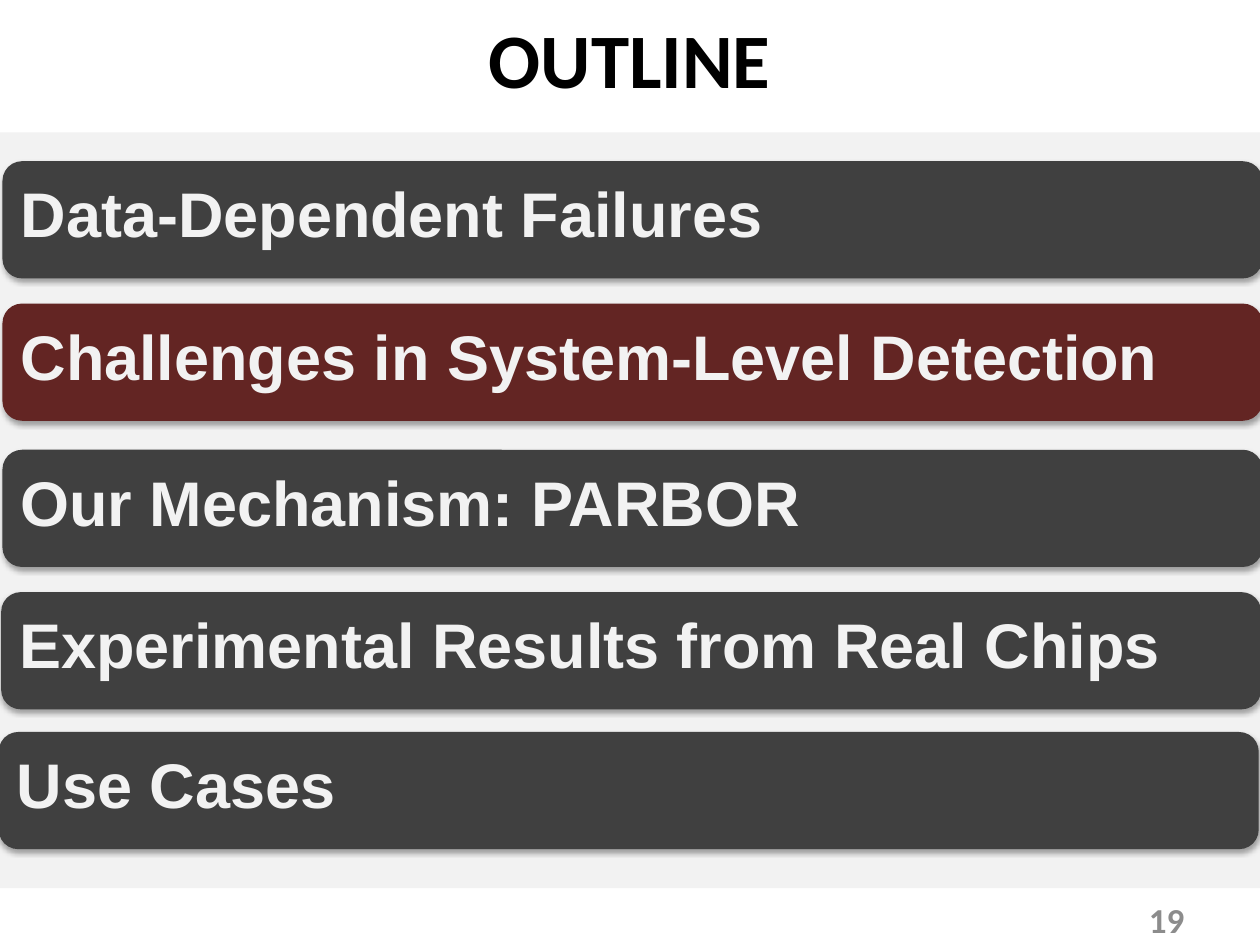
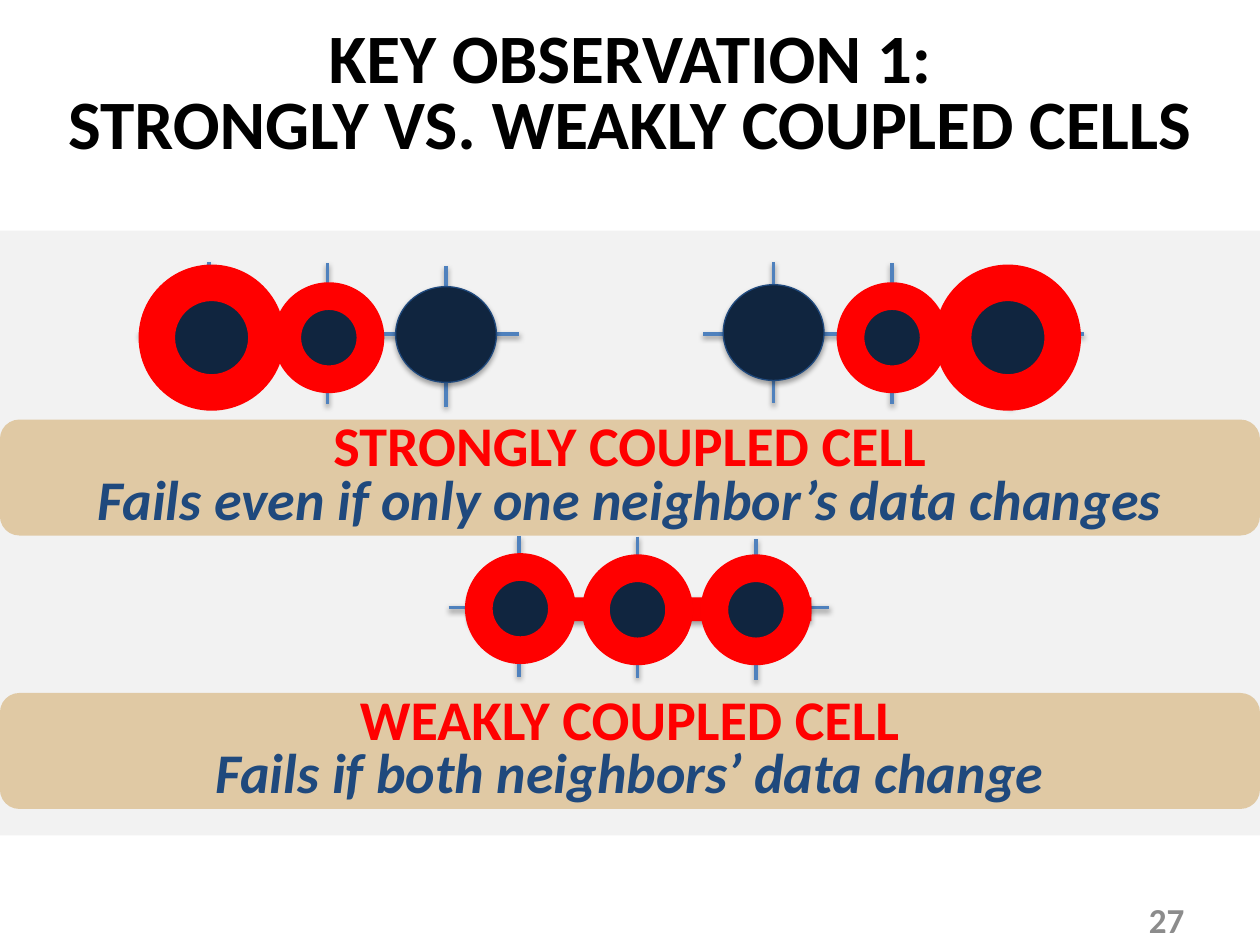
from lxml import etree
from pptx import Presentation
from pptx import util as u
from pptx.dml.color import RGBColor
from pptx.enum import shapes, text
from pptx.oxml.ns import qn

BLACK = RGBColor(0x00, 0x00, 0x00)
WHITE = RGBColor(0xFF, 0xFF, 0xFF)
PALE = RGBColor(0xF2, 0xF2, 0xF2)
GRAY = RGBColor(0x8C, 0x8C, 0x8C)
CHARCOAL = RGBColor(0x40, 0x40, 0x40)
MAROON = RGBColor(0x63, 0x25, 0x23)
RED = RGBColor(0xFF, 0x00, 0x00)
TAN = RGBColor(0xE0, 0xC9, 0xA4)
BLUE = RGBColor(0x1F, 0x49, 0x7D)
WIRE_BLUE = RGBColor(0x4F, 0x81, 0xBD)
NAVY = RGBColor(0x10, 0x25, 0x3F)

RECT = shapes.MSO_SHAPE.RECTANGLE
ROUND = shapes.MSO_SHAPE.ROUNDED_RECTANGLE
OVAL = shapes.MSO_SHAPE.OVAL
DONUT = shapes.MSO_SHAPE.DONUT
LEFT, CENTER, RIGHT = (text.PP_ALIGN.LEFT, text.PP_ALIGN.CENTER,
                       text.PP_ALIGN.RIGHT)


def inches(*lengths):
    return [u.Inches(v) for v in lengths]


def set_effect(sp, alpha=None, dist=1.8):
    effects = etree.SubElement(sp._element.spPr, qn("a:effectLst"))
    if alpha:
        shadow = etree.SubElement(
            effects, qn("a:outerShdw"), blurRad=str(u.Pt(3.1)),
            dist=str(u.Pt(dist)), dir="5400000", rotWithShape="0")
        color = etree.SubElement(shadow, qn("a:srgbClr"), val="000000")
        etree.SubElement(color, qn("a:alpha"), val=str(alpha * 1000))


class Deck:
    def __init__(self):
        self.prs = Presentation()
        self.prs.slide_width, self.prs.slide_height = inches(10, 7.5)

    def slide(self, title, number, title_box, size, spacing, band_top, band_height):
        self.s = self.prs.slides.add_slide(self.prs.slide_layouts[5])
        self.s.background.fill.solid()
        self.s.background.fill.fore_color.rgb = WHITE
        self.target = self.s.shapes
        self.shape(RECT, 0, band_top, 10, band_height, PALE)
        sp = self.s.shapes.title
        sp.left, sp.top, sp.width, sp.height = inches(*title_box)
        self.label(sp, [title], size, BLACK, CENTER, spacing=spacing)
        box = self.s.shapes.add_textbox(*inches(7.17, 7.1, 2.33, 0.4))
        self.label(box, [str(number)], 20, GRAY, RIGHT)

    def label(self, sp, lines, size, color, align, font="Calibri", spacing=None):
        tf = sp.text_frame
        tf.text = "\n".join(lines)
        tf.word_wrap = True
        tf.auto_size = text.MSO_AUTO_SIZE.NONE
        tf.vertical_anchor = text.MSO_ANCHOR.MIDDLE
        for p in tf.paragraphs:
            p.alignment = align
            p.line_spacing = spacing
            p.font.name, p.font.size, p.font.bold = font, u.Pt(size), True
            p.font.color.rgb = color
        return tf

    def shape(self, kind, x, y, w, h, fill, line=None, shadow=False):
        sp = self.target.add_shape(kind, *inches(x, y, w, h))
        sp.fill.solid()
        sp.fill.fore_color.rgb = fill
        if line:
            sp.line.color.rgb = line
            sp.line.width = u.Pt(0.75)
        else:
            sp.line.fill.background()
        set_effect(sp, 35 if shadow else None)
        return sp

    def wire(self, x1, y1, x2, y2):
        cx = self.target.add_connector(
            shapes.MSO_CONNECTOR.STRAIGHT, *inches(x1, y1, x2, y2))
        cx.line.color.rgb = WIRE_BLUE
        cx.line.width = u.Pt(2)
        set_effect(cx, 38, 1.6)

    def topic(self, name, x, y, fill):
        sp = self.shape(ROUND, x, y, 10, 0.93, fill, shadow=True)
        self.label(sp, [name], 36, PALE, LEFT, "Arial", 0.8)

    def callout(self, heading, detail, y):
        sp = self.shape(ROUND, 0, y, 10, 0.92, TAN)
        tf = self.label(sp, [heading, detail], 32, RED, CENTER, spacing=0.8)
        tf.paragraphs[1].font.color.rgb = BLUE
        tf.paragraphs[1].font.italic = True

    def cells(self, x, y, link, rings):
        self.target = self.s.shapes.add_group_shape().shapes
        self.wire(x, y + 0.57, x + 3.02, y + 0.57)
        drops = (0, 0.01, 0.03)
        for i, drop in enumerate(drops):
            wire_x = x + 0.56 + 0.94 * i
            self.wire(wire_x, y + drop, wire_x, y + drop + 1.12)
        link_x, link_width = link
        self.shape(RECT, x + link_x, y + 0.49, link_width, 0.19, RED, shadow=True)
        for i, drop in enumerate(drops):
            self.shape(OVAL, x + 0.16 + 0.94 * i, y + 0.18 + drop / 2,
                       0.8, 0.76, NAVY, BLUE, True)
        for ring_x, ring_y, size in rings:
            self.shape(DONUT, x + ring_x, y + ring_y, size, size, RED)
        self.target = self.s.shapes


def main():
    deck = Deck()
    deck.slide("OUTLINE", 19, (0, -0.17, 10, 1.25), 44, None, 1.05, 6)
    for name, x, y, fill in (
            ("Data-Dependent Failures", 0.02, 1.28, CHARCOAL),
            ("Challenges in System-Level Detection", 0.02, 2.41, MAROON),
            ("Our Mechanism: PARBOR", 0.02, 3.57, CHARCOAL),
            ("Experimental Results from Real Chips", 0.01, 4.7, CHARCOAL),
            ("Use Cases", -0.01, 5.81, CHARCOAL)):
        deck.topic(name, x, y, fill)

    deck.slide("KEY OBSERVATION 1:\vSTRONGLY VS. WEAKLY COUPLED CELLS", 27,
               (0, 0, 10, 1.53), 39.6, 0.8, 1.83, 4.8)
    deck.cells(3.56, 4.25, (0.16, 2.72),
               [(0.13, 0.14, 0.88), (1.06, 0.15, 0.88), (2, 0.15, 0.88)])
    deck.cells(1.1, 2.08, (0.16, 1.68), [(0, 0.02, 1.16), (1.07, 0.16, 0.88)])
    deck.cells(5.58, 2.08, (1.19, 1.68), [(1.84, 0.02, 1.16), (1.06, 0.16, 0.88)])
    deck.callout("STRONGLY COUPLED CELL",
                 "Fails even if only one neighbor’s data changes", 3.33)
    deck.callout("WEAKLY COUPLED CELL",
                 "Fails if both neighbors’ data change", 5.5)
    deck.prs.save("out.pptx")


if __name__ == "__main__":
    main()
